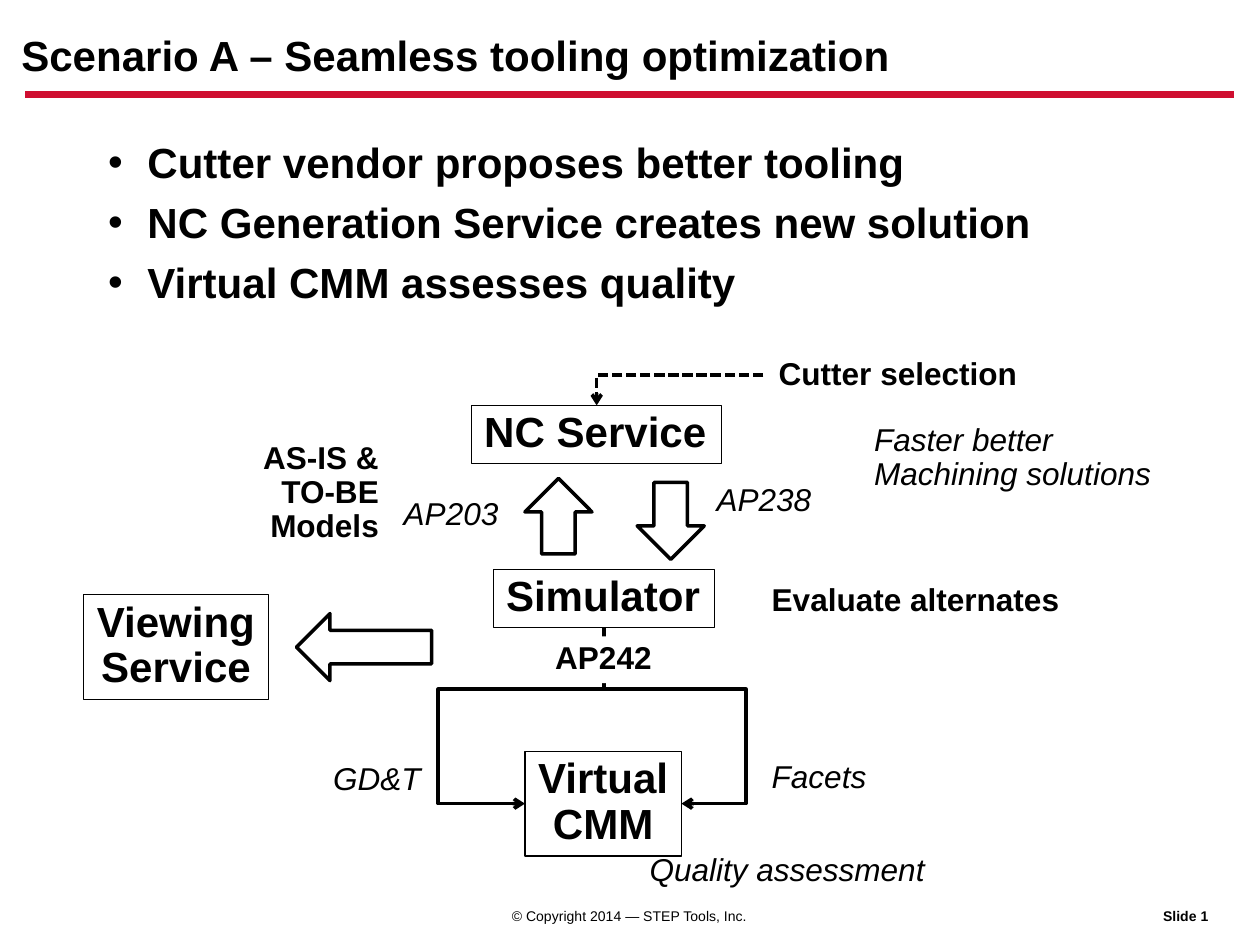
from lxml import etree
from pptx import Presentation
from pptx import util as u
from pptx.dml.color import RGBColor
from pptx.enum import dml, shapes, text
from pptx.oxml.ns import qn

BLACK = RGBColor(0x00, 0x00, 0x00)
WHITE = RGBColor(0xFF, 0xFF, 0xFF)
RED = RGBColor(0xCF, 0x0E, 0x30)
FONT = "Arial"
LEFT, CENTER, RIGHT = text.PP_ALIGN.LEFT, text.PP_ALIGN.CENTER, text.PP_ALIGN.RIGHT


def place(box, left, top, *size):
    return [u.Cm(v) for v in (box[0] + left, box[1] + top, *size)]


def write(shape, lines, size, bold=False, italic=False, align=LEFT, wrap=False):
    frame = shape.text_frame
    frame.word_wrap = wrap
    frame.vertical_anchor = text.MSO_ANCHOR.TOP
    for index, line in enumerate(lines):
        paragraph = frame.paragraphs[0] if index == 0 else frame.add_paragraph()
        paragraph.alignment = align
        paragraph.line_spacing = 0.9
        run = paragraph.add_run()
        run.text = line
        font = run.font
        font.name, font.size, font.bold, font.italic = FONT, u.Pt(size), bold, italic
        font.color.rgb = BLACK
    return frame


def add_label(slide, place_at, lines, size=18, fill=None, **style):
    label = slide.shapes.add_textbox(*place_at)
    if fill is not None:
        label.fill.solid()
        label.fill.fore_color.rgb = fill
    return write(label, lines, size, **style)


def add_outline(slide, kind, place_at, width):
    shape = slide.shapes.add_shape(kind, *place_at)
    shape.shadow.inherit = False
    shape.fill.background()
    shape.line.color.rgb = BLACK
    shape.line.width = u.Pt(width)
    return shape


def add_line(slide, kind, place_at, color, width, arrow=False):
    connector = slide.shapes.add_connector(kind, *place_at)
    connector.line.color.rgb = color
    connector.line.width = u.Pt(width)
    properties = connector._element.spPr
    if arrow:
        etree.SubElement(properties.find(qn("a:ln")), qn("a:tailEnd"), type="arrow")
    etree.SubElement(properties, qn("a:effectLst"))
    return connector


def set_geometry(connector, preset, adjustments=()):
    geometry = connector._element.spPr.find(qn("a:prstGeom"))
    geometry.set("prst", preset)
    guides = geometry.find(qn("a:avLst"))
    if guides is None:
        guides = etree.SubElement(geometry, qn("a:avLst"))
    for number, value in enumerate(adjustments, 1):
        etree.SubElement(guides, qn("a:gd"), name=f"adj{number}",
                         fmla=f"val {round(value * 100000)}")


def add_side_loop(slide, box, start, end, drop, lane):
    height = end[1] - start[1]
    reach = abs(end[0] - start[0])
    middle_x, middle_y = (start[0] + end[0]) / 2, (start[1] + end[1]) / 2
    left, top = middle_x - height / 2, middle_y - reach / 2
    connector = add_line(slide, shapes.MSO_CONNECTOR.ELBOW,
                         place(box, left, top, box[0] + left + height, box[1] + top + reach),
                         BLACK, 2, arrow=True)
    set_geometry(connector, "bentConnector4",
                 (drop / height, abs(lane - start[0]) / reach))
    frame = connector._element.spPr.find(qn("a:xfrm"))
    if end[0] < start[0]:
        frame.set("rot", "5400000")
    else:
        frame.set("rot", "16200000")
        frame.set("flipH", "1")


def add_header(slide, box):
    frame = add_label(slide, place(box, 0, 0, 17.55, 0.91),
                      ["Scenario A – Seamless tooling optimization"], 24, bold=True)
    frame.margin_left = frame.margin_right = frame.margin_top = frame.margin_bottom = 0
    rule_y = box[1] + box[3]
    add_line(slide, shapes.MSO_CONNECTOR.STRAIGHT,
             place(box, 0.08, box[3], box[0] + box[2], rule_y), RED, 4)


def add_bullets(slide, box):
    frame = add_label(slide, place(box, 0, 0, *box[2:]),
                      ["Cutter vendor proposes better tooling",
                       "NC Generation Service creates new solution",
                       "Virtual CMM assesses quality"], 24, bold=True, wrap=True)
    for index, paragraph in enumerate(frame.paragraphs):
        if index:
            paragraph.space_before = u.Pt(8.3)
        properties = paragraph._p.get_or_add_pPr()
        properties.set("marL", str(u.Cm(0.79)))
        properties.set("indent", str(-u.Cm(0.79)))
        etree.SubElement(properties, qn("a:buFont"), typeface=FONT)
        etree.SubElement(properties, qn("a:buChar"), char="•")


def add_diagram(slide, box):
    services = [
        (["NC Service"], LEFT, (7.82, 1.07, 5.03, 1.17)),
        (["Simulator"], LEFT, (8.26, 4.37, 4.45, 1.17)),
        (["Virtual", "CMM"], CENTER, (8.89, 8.03, 3.15, 2.11)),
        (["Viewing", "Service"], CENTER, (0, 4.88, 3.73, 2.11)),
    ]
    for lines, align, spot in services:
        shape = add_outline(slide, shapes.MSO_SHAPE.RECTANGLE, place(box, *spot), 0.75)
        write(shape, lines, 24, bold=True, align=align)

    nc, simulator, cmm = (spot for _, _, spot in services[:3])
    start = (simulator[0] + simulator[2] / 2, simulator[1] + simulator[3])
    cmm_middle = cmm[1] + cmm[3] / 2
    for end_x, lane in ((cmm[0], 7.14), (cmm[0] + cmm[2], 13.34)):
        add_side_loop(slide, box, start, (end_x, cmm_middle), 1.24, lane)

    selection = add_line(slide, shapes.MSO_CONNECTOR.ELBOW,
                         place(box, 13.69, 0.46, box[0] + nc[0] + nc[2] / 2, box[1] + nc[1]),
                         BLACK, 2, arrow=True)
    selection.line.dash_style = dml.MSO_LINE.SQUARE_DOT
    set_geometry(selection, "bentConnector2")

    italic, bold = {"italic": True}, {"bold": True}
    bold_right = {"bold": True, "align": RIGHT}
    for lines, spot, style in (
        (["AP203"], (6.2, 2.82, 2.46, 0.94), {"italic": True, "fill": WHITE}),
        (["AP242"], (9.25, 5.72, 2.46, 0.94), {"bold": True, "fill": WHITE}),
        (["AP238"], (12.5, 2.54, 2.46, 0.94), {"italic": True, "fill": WHITE}),
        (["GD&T"], (4.78, 8.15, 2.34, 0.94), italic),
        (["Facets"], (13.61, 8.1, 2.44, 0.94), italic),
        (["Quality assessment"], (11.15, 9.98, 6.1, 0.94), italic),
        (["Faster better", "Machining solutions"], (15.67, 1.32, 6.15, 1.65), italic),
        (["Evaluate alternates"], (13.61, 4.55, 6.35, 0.94), bold),
        (["AS-IS &", "TO-BE", "Models"], (3.3, 1.68, 2.9, 2.34), bold_right),
        (["Cutter selection"], (13.69, 0, 5.36, 0.94), bold_right),
    ):
        add_label(slide, place(box, *spot), lines, **style)

    for kind, spot in (
        (shapes.MSO_SHAPE.LEFT_ARROW, (4.29, 5.26, 2.72, 1.35)),
        (shapes.MSO_SHAPE.UP_ARROW, (8.89, 2.54, 1.35, 1.52)),
        (shapes.MSO_SHAPE.DOWN_ARROW, (11.15, 2.62, 1.35, 1.55)),
    ):
        add_outline(slide, kind, place(box, *spot), 2)


def add_footer(slide, box):
    add_label(slide, place(box, 0, 0, 5.33, box[3]),
              ["© Copyright 2014 — STEP Tools, Inc."], 8, align=CENTER)
    add_label(slide, place(box, box[2] - 1.6, 0, 1.6, box[3]), ["Slide 1"], 8, bold=True)


def main():
    presentation = Presentation()
    presentation.slide_width, presentation.slide_height = u.Cm(25.37), u.Cm(19.02)
    slide = presentation.slides.add_slide(presentation.slide_layouts[6])
    add_header(slide, (0.43, 0.71, 24.41, 1.2))
    add_bullets(slide, (1.93, 2.74, 21.51, 4.88))
    add_diagram(slide, (1.68, 7.09, 21.82, 10.92))
    add_footer(slide, (10.01, 18.19, 14.76, 0.56))
    presentation.save("out.pptx")


if __name__ == "__main__":
    main()
